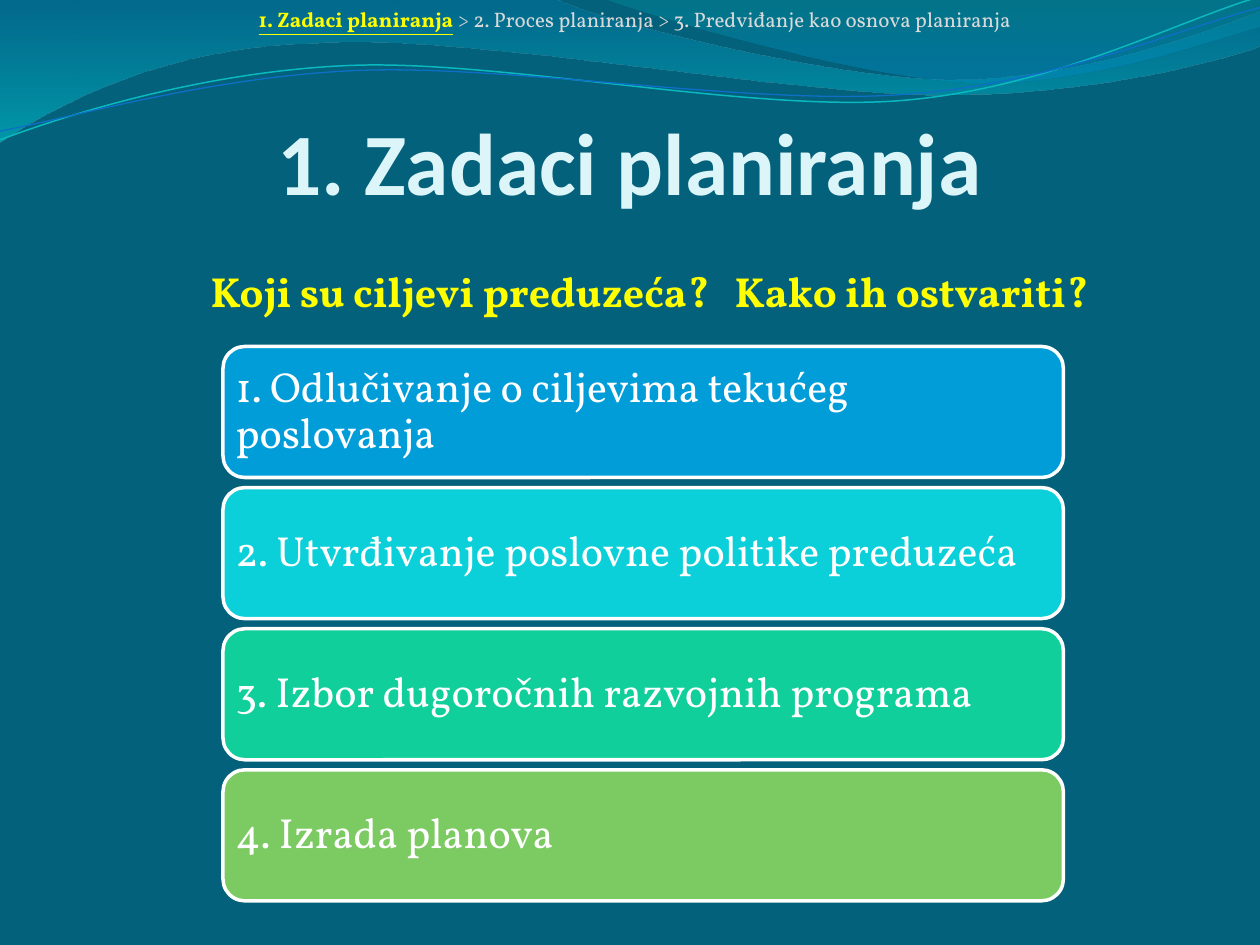
from math import cos, radians, sin

from lxml import etree
from pptx import Presentation
from pptx import util as u
from pptx.dml.color import RGBColor
from pptx.enum import shapes, text
from pptx.oxml.ns import qn

COLORS = {
    "background": "04617B", "title": "DBF5F9", "accent": "FFFF00",
    "white": "FFFFFF", "muted": "D9D9D9",
    "wave_teal": "0AB8BF", "wave_blue": "0F6FC6",
}
TASKS = [
    ("1. Odlučivanje o ciljevima tekućeg poslovanja", "009DD9"),
    ("2. Utvrđivanje poslovne politike preduzeća", "0BD0D9"),
    ("3. Izbor dugoročnih razvojnih programa", "10CF9B"),
    ("4. Izrada planova", "7CCA62"),
]
TILT = 2.7


def rgb(value):
    return RGBColor.from_string(COLORS.get(value, value))


def level(point, center):
    """Undo the counter-clockwise tilt of a point about a center."""
    dx, dy = point[0] - center[0], point[1] - center[1]
    c, s = cos(radians(TILT)), sin(radians(TILT))
    return center[0] + c * dx - s * dy, center[1] + s * dx + c * dy


class Deck:
    font = "Vollkorn"

    def __init__(self, prs):
        self.s = prs.slides.add_slide(prs.slide_layouts[6])
        self.s.background.fill.solid()
        self.s.background.fill.fore_color.rgb = rgb("background")

    def outline(self, start, segments, close):
        """Each segment lists its points: one for a line, three for a Bezier curve."""
        ends = [(u.Inches(x), u.Inches(y)) for x, y in [start] + [g[-1] for g in segments]]
        builder = self.s.shapes.build_freeform(*ends[0], scale=1.0)
        builder.add_line_segments(ends[1:], close=close)
        sp = builder.convert_to_shape()
        sp.shadow.inherit = False
        for line, seg in zip(list(sp._element.iter(qn("a:lnTo"))), segments):
            if len(seg) == 3:
                curve = etree.Element(qn("a:cubicBezTo"))
                for x, y in seg:
                    etree.SubElement(curve, qn("a:pt"), x=str(u.Inches(x) - sp.left),
                                     y=str(u.Inches(y) - sp.top))
                line.getparent().replace(line, curve)
        return sp

    def band(self, start, segments, stops):
        """Filled wave; stops are (position, colour, opacity %), top to bottom."""
        sp = self.outline(start, segments, True)
        sp.line.fill.background()
        sp.fill.gradient()
        sp.fill.gradient_angle = 270
        for stop, (position, color, _) in zip(sp.fill.gradient_stops, stops):
            stop.position = position
            stop.color.rgb = rgb(color)
        for gs, (_, _, opacity) in zip(sp._element.iter(qn("a:gs")), stops):
            etree.SubElement(gs[0], qn("a:alpha"), val=str(opacity * 1000))

    def wave(self, center, start, segments, color, width):
        """Open curve in a frame that is tilted about its center."""
        flat = [[level(pt, center) for pt in seg] for seg in segments]
        sp = self.outline(level(start, center), flat, False)
        sp.rotation = 360 - TILT
        sp.fill.background()
        sp.line.color.rgb = rgb(color)
        sp.line.width = u.Pt(width)

    def style(self, r, size, color, bold=False, underline=False, font=None):
        r.font.name = font or self.font
        r.font.size = u.Pt(size)
        r.font.bold = bold
        r.font.underline = underline
        r.font.color.rgb = rgb(color)

    def label(self, x, y, w, h, runs, size, font=None, bottom=False):
        """Centred text; runs are (text, colour, bold, underline)."""
        sp = self.s.shapes.add_textbox(*map(u.Inches, (x, y, w, h)))
        tf = sp.text_frame
        tf.word_wrap = True
        if bottom:
            tf.vertical_anchor = text.MSO_ANCHOR.BOTTOM
            tf.margin_left = tf.margin_right = tf.margin_bottom = 0
        else:
            tf.auto_size = text.MSO_AUTO_SIZE.SHAPE_TO_FIT_TEXT
        p = tf.paragraphs[0]
        p.alignment = text.PP_ALIGN.CENTER
        for words, color, bold, underline in runs:
            r = p.add_run()
            r.text = words
            self.style(r, size, color, bold, underline, font)

    def box(self, x, y, w, h, words, color):
        sp = self.s.shapes.add_shape(shapes.MSO_SHAPE.ROUNDED_RECTANGLE,
                                     *map(u.Inches, (x, y, w, h)))
        sp.shadow.inherit = False
        sp.fill.solid()
        sp.fill.fore_color.rgb = rgb(color)
        sp.line.color.rgb = rgb("white")
        sp.line.width = u.Pt(2)
        tf = sp.text_frame
        tf.word_wrap = True
        tf.vertical_anchor = text.MSO_ANCHOR.MIDDLE
        tf.margin_left = tf.margin_right = u.Inches(0.05)
        tf.text = words
        p = tf.paragraphs[0]
        p.alignment = text.PP_ALIGN.LEFT
        p.line_spacing = 0.9
        self.style(p.runs[0], 24, "white")


def main():
    prs = Presentation()
    prs.slide_width, prs.slide_height = u.Inches(10), u.Inches(7.5)
    deck = Deck(prs)

    deck.band((0, 0), [[(4.4, -0.01)],
                       [(4.76, 0.17), (6.64, 0.63), (7.58, 0.63)],
                       [(8.53, 0.63), (9.58, 0.26), (10, 0.09)],
                       [(10.01, 0.36)],
                       [(9.83, 0.44), (8.7, 0.76), (7.46, 0.75)],
                       [(6.22, 0.75), (3.82, 0.28), (2.57, 0.34)],
                       [(1.29, 0.36), (0.46, 0.83), (-0.01, 1.13)]],
              [(0, "0074A1", 45), (1, "00C6CF", 55)])
    deck.band((4.79, -0.01), [[(5.09, 0.11), (6.82, 0.62), (7.69, 0.65)],
                              [(8.56, 0.69), (9.61, 0.32), (10, 0.21)],
                              [(10, 0)]],
              [(0, "00A1A9", 30), (0.8, "008BBF", 45)])
    deck.wave((4.99, 0.58), (0, 1.11),
              [[(0.48, 0.93), (1.58, 0.57), (2.77, 0.52)],
               [(3.95, 0.47), (5.93, 0.89), (7.13, 0.8)],
               [(8.33, 0.71), (9.38, 0.15), (9.98, -0.02)]], "wave_teal", 0.85)
    deck.wave((5, 0.59), (0, 1.04),
              [[(0.47, 0.96), (1.64, 0.61), (2.83, 0.56)],
               [(4.03, 0.51), (5.97, 0.84), (7.17, 0.75)],
               [(8.36, 0.67), (9.41, 0.21), (10, 0.06)]], "wave_blue", 0.75)

    deck.label(0.5, 0.44, 9, 1.25, [("1. Zadaci planiranja", "title", True, False)],
               50, font="Calibri", bottom=True)
    deck.label(0.51, 2.06, 9.29, 0.5,
               [("Koji su ciljevi preduzeća?   Kako ih ostvariti?", "accent", True, False)], 24)
    deck.label(0.04, 0, 10, 0.3, [
        ("1. Zadaci planiranja", "accent", True, True),
        (" ", "white", False, False),
        ("> 2. Proces planiranja > 3. Predviđanje kao osnova planiranja",
         "muted", False, False)], 12)

    for i, (words, color) in enumerate(TASKS):
        deck.box(1.77, 2.75 + 1.12 * i, 6.67, 1.04, words, color)
    prs.save("out.pptx")


if __name__ == "__main__":
    main()
